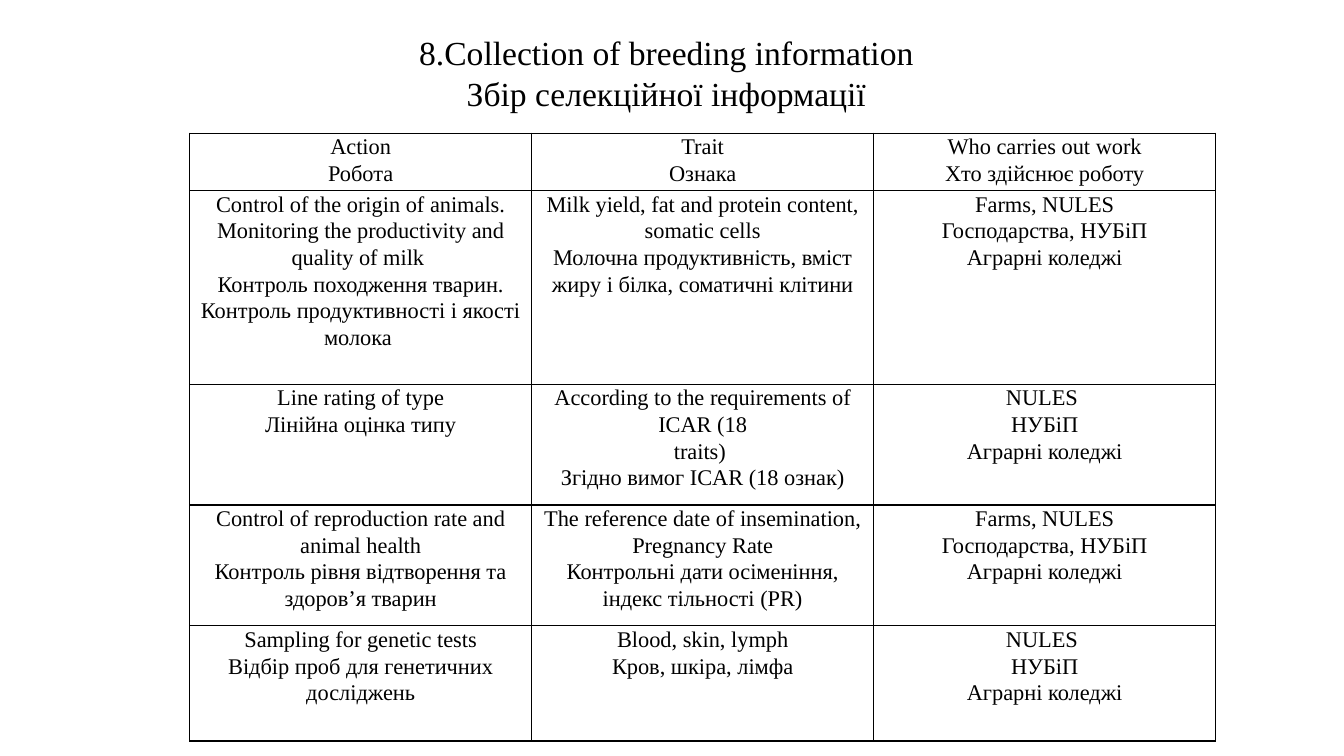
"""Build a slide with a bilingual table on collecting breeding information."""
from pptx import Presentation
from pptx.dml.color import RGBColor
from pptx.enum import text
from pptx.oxml import parse_xml
from pptx.oxml.ns import nsdecls
from pptx.util import Pt

BLACK = RGBColor(0, 0, 0)
FONT = "Times New Roman"
TITLE = "8.Collection of breeding information\nЗбір селекційної інформації"
COL_WIDTH = 244.3
ROW_HEIGHTS = [41, 138.3, 86.3, 86.3, 82.3]
FARMS = "Farms, NULES\nГосподарства, НУБіП\nАграрні коледжі"
UNIVERSITY = "NULES \nНУБіП\nАграрні коледжі"
ROWS = [
    ["Action\nРобота", "Trait\nОзнака", "Who carries out work\nХто здійснює роботу"],
    ["Control of the origin of animals. Monitoring the productivity and quality of milk \n"
     "Контроль походження тварин. Контроль продуктивності і якості молока ",
     "Milk yield, fat and protein content, somatic cells\n"
     "Молочна продуктивність, вміст жиру і білка, соматичні клітини",
     FARMS],
    ["Line rating of type\nЛінійна оцінка типу",
     "According to the requirements of ICAR (18\ntraits) \nЗгідно вимог ICAR (18 ознак)",
     UNIVERSITY],
    ["Control of reproduction rate and animal health\n"
     "Контроль рівня відтворення та здоров’я тварин",
     "The reference date of insemination, Pregnancy Rate\n"
     "Контрольні дати осіменіння, індекс тільності (PR)",
     FARMS],
    ["Sampling for genetic tests\nВідбір проб для генетичних досліджень",
     "Blood, skin, lymph\nКров, шкіра, лімфа",
     UNIVERSITY],
]


def format_text(tf, size, spacing):
    """Centre the paragraphs and set the font of their runs."""
    for p in tf.paragraphs:
        p.alignment = text.PP_ALIGN.CENTER
        p.line_spacing = spacing
        for r in p.runs:
            r.font.name = FONT
            r.font.size = Pt(size)
            r.font.bold = False
            r.font.color.rgb = BLACK


def add_title(s):
    """Fill and place the title placeholder."""
    sp = s.shapes.title
    sp.left, sp.top, sp.width, sp.height = Pt(236), Pt(19.5), Pt(480), Pt(65.5)
    tf = sp.text_frame
    tf.text = TITLE
    tf.word_wrap = True
    tf.auto_size = text.MSO_AUTO_SIZE.NONE
    tf.vertical_anchor = text.MSO_ANCHOR.TOP
    format_text(tf, 24, 1.0)


def add_borders(cell):
    """Draw a thin line on every side of a cell."""
    tc_pr = cell._tc.get_or_add_tcPr()
    for side in "LRTB":
        tc_pr.append(parse_xml(
            f'<a:ln{side} {nsdecls("a")} w="{Pt(1)}"><a:solidFill>'
            f'<a:srgbClr val="{BLACK}"/></a:solidFill></a:ln{side}>'))


def fill_cell(cell, content):
    """Write one cell with its margins, borders and font."""
    cell.text_frame.text = content
    cell.margin_left = cell.margin_right = Pt(5)
    cell.margin_top = cell.margin_bottom = Pt(0)
    format_text(cell.text_frame, 16, 1.07)
    add_borders(cell)
    cell.fill.background()


def add_work_table(s):
    """Add the table of actions, traits and responsible bodies."""
    cols = len(ROWS[0])
    tbl = s.shapes.add_table(len(ROWS), cols, Pt(135.5), Pt(95.2),
                             Pt(COL_WIDTH * cols), Pt(sum(ROW_HEIGHTS))).table
    tbl.first_row = tbl.horz_banding = False
    for col in tbl.columns:
        col.width = Pt(COL_WIDTH)
    for row, height, contents in zip(tbl.rows, ROW_HEIGHTS, ROWS):
        row.height = Pt(height)
        for cell, content in zip(row.cells, contents):
            fill_cell(cell, content)


def main():
    """Create and save the presentation."""
    prs = Presentation()
    prs.slide_width, prs.slide_height = Pt(960), Pt(540)
    s = prs.slides.add_slide(prs.slide_layouts[5])
    add_title(s)
    add_work_table(s)
    prs.save("out.pptx")


if __name__ == "__main__":
    main()
